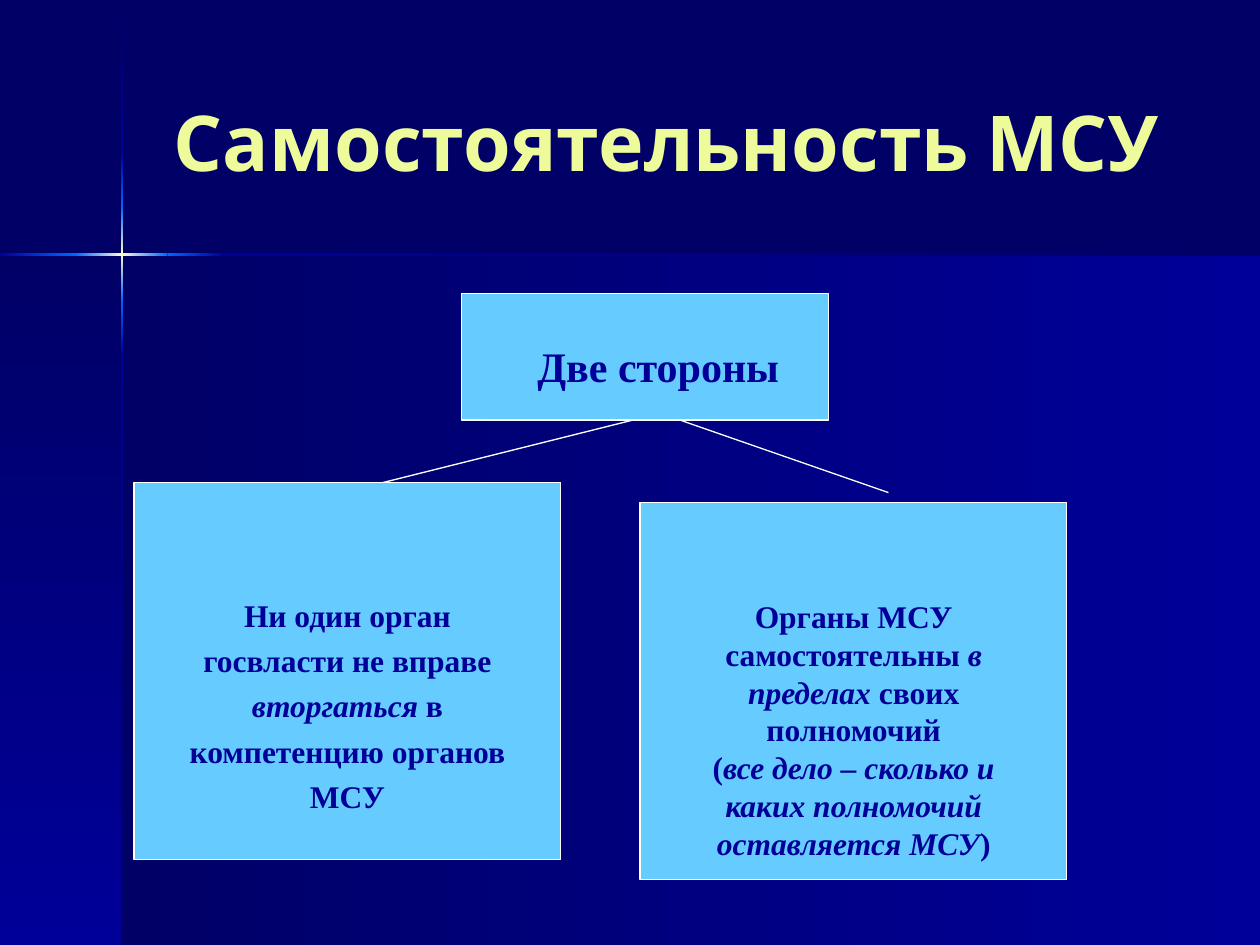
import copy
import itertools

import pptx
import pptx.dml.color
import pptx.enum.shapes
import pptx.enum.text
import pptx.oxml
import pptx.oxml.ns
import pptx.util

Cm = pptx.util.Cm
RGBColor = pptx.dml.color.RGBColor

NAVY = RGBColor(0x00, 0x00, 0x66)
BLUE = RGBColor(0x00, 0x00, 0x99)
BRIGHT = RGBColor(0x00, 0x66, 0xFF)
CREAM = RGBColor(0xFF, 0xFF, 0xCC)
SKY = RGBColor(0x66, 0xCC, 0xFF)
WHITE = RGBColor(0xFF, 0xFF, 0xFF)
LEMON = RGBColor(0xED, 0xFB, 0x9B)

WIDTH, HEIGHT = 25.4, 19.05
CROSS_X, CROSS_Y = 2.46, 5.13
BAR = 0.05


def add_span(para, text, size=18, font="Times New Roman", color=BLUE, bold=True, italic=False):
    span = para.add_run()
    span.text = text
    span.font.size = pptx.util.Pt(size)
    span.font.name = font
    span.font.color.rgb = color
    span.font.bold = bold
    span.font.italic = italic


class Painter:
    line_color = WHITE
    line_width = pptx.util.Pt(0.75)
    box_color = SKY

    def __init__(self, page):
        self.page = page

    def background(self, color):
        fill = self.page.background.fill
        fill.solid()
        fill.fore_color.rgb = color

    def rectangle(self, left, top, width, height):
        box = self.page.shapes.add_shape(
            pptx.enum.shapes.MSO_SHAPE.RECTANGLE, Cm(left), Cm(top), Cm(width), Cm(height))
        box.shadow.inherit = False
        return box

    def gradient(self, left, top, width, height, colors, vertical):
        box = self.rectangle(left, top, width, height)
        box.line.fill.background()
        box.fill.gradient()
        box.fill.gradient_angle = 270 if vertical else 0
        stop_list = box.element.spPr.find(".//" + pptx.oxml.ns.qn("a:gsLst"))
        while len(stop_list) < len(colors):
            stop_list.append(copy.deepcopy(stop_list[-1]))
        for index, (stop, color) in enumerate(zip(box.fill.gradient_stops, colors)):
            stop.position = index / (len(colors) - 1)
            stop.color.rgb = color

    def ray(self, marks, vertical):
        ramps = [(NAVY, BLUE), (BLUE, BRIGHT), (BRIGHT, CREAM, BRIGHT), (BRIGHT, BLUE), (BLUE, NAVY)]
        ramps = ramps[-(len(marks) - 1):]
        for (start, end), colors in zip(itertools.pairwise(marks), ramps):
            if vertical:
                self.gradient(CROSS_X - BAR / 2, start, BAR, end - start, colors, True)
            else:
                self.gradient(start, CROSS_Y - BAR / 2, end - start, BAR, colors, False)

    def box(self, left, top, width, height):
        box = self.rectangle(left, top, width, height)
        box.fill.solid()
        box.fill.fore_color.rgb = self.box_color
        box.line.color.rgb = self.line_color
        box.line.width = self.line_width

    def line(self, start, end):
        line = self.page.shapes.add_connector(
            pptx.enum.shapes.MSO_CONNECTOR.STRAIGHT, *map(Cm, start + end))
        line.line.color.rgb = self.line_color
        line.line.width = self.line_width
        line.element.spPr.append(pptx.oxml.parse_xml(
            f"<a:effectLst {pptx.oxml.ns.nsdecls('a')}/>"))

    def title(self, left, top, width, height, text):
        title = self.page.shapes.title
        title.left, title.top, title.width, title.height = map(Cm, (left, top, width, height))
        title.text_frame.vertical_anchor = pptx.enum.text.MSO_ANCHOR.MIDDLE
        para = title.text_frame.paragraphs[0]
        para.alignment = pptx.enum.text.PP_ALIGN.CENTER
        add_span(para, text, size=44, font="Cabin", color=LEMON)

    def text(self, left, top, width, height, paragraphs, size=18, spacing=None):
        frame = self.page.shapes.add_textbox(Cm(left), Cm(top), Cm(width), Cm(height)).text_frame
        frame.word_wrap = True
        frame.auto_size = pptx.enum.text.MSO_AUTO_SIZE.SHAPE_TO_FIT_TEXT
        for index, spans in enumerate(paragraphs):
            para = frame.add_paragraph() if index else frame.paragraphs[0]
            para.alignment = pptx.enum.text.PP_ALIGN.CENTER
            para.line_spacing = spacing
            for text, italic in spans:
                add_span(para, text, size=size, italic=italic)


def main():
    deck = pptx.Presentation()
    deck.slide_width, deck.slide_height = Cm(WIDTH), Cm(HEIGHT)
    painter = Painter(deck.slides.add_slide(deck.slide_layouts[5]))

    painter.background(NAVY)
    painter.gradient(CROSS_X, CROSS_Y, WIDTH - CROSS_X, HEIGHT - CROSS_Y, (NAVY, BLUE), False)
    painter.gradient(0, CROSS_Y, CROSS_X, HEIGHT - CROSS_Y, (NAVY, BLUE), True)
    painter.ray((0.03, 3.07, 4.19, 6.05, 7.16, HEIGHT), True)
    painter.ray((0, 1.53, 3.38, 4.5, WIDTH), False)

    for end in ((6.91, 9.93), (17.91, 9.93)):
        painter.line((13.31, 8.33), end)
    painter.box(9.3, 5.92, 7.4, 2.55)
    painter.title(2.97, 0.84, 20.95, 3.99, "Самостоятельность МСУ")
    for left, top in ((2.7, 9.73), (12.9, 10.13)):
        painter.box(left, top, 8.6, 7.6)

    painter.text(3.5, 11.73, 7.01, 4.85, [[
        ("Ни один орган госвласти не вправе ", False),
        ("вторгаться", True),
        (" в компетенцию органов МСУ", False),
    ]], spacing=1.2)
    painter.text(9.7, 6.73, 7.14, 1.27, [[("Две стороны", False)]], size=24)
    painter.text(13.31, 11.91, 7.8, 5.59, [
        [
            ("Органы МСУ самостоятельны ", False),
            ("в пределах", True),
            (" своих полномочий", False),
        ],
        [
            ("(", False),
            ("все дело – сколько и каких полномочий оставляется МСУ", True),
            (")", False),
        ],
    ])

    deck.save("out.pptx")


if __name__ == "__main__":
    main()
